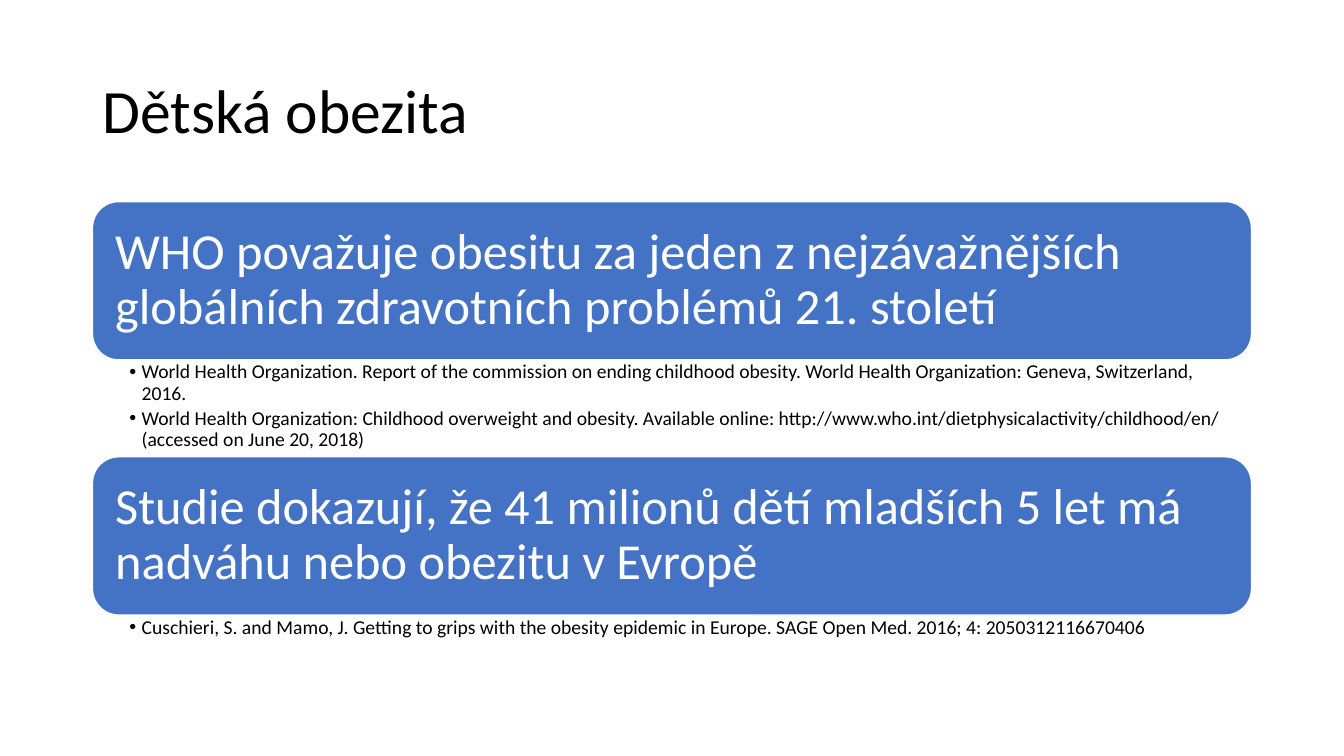
from pptx import Presentation
from pptx.dml.color import RGBColor
from pptx.enum.shapes import MSO_SHAPE
from pptx.enum.text import MSO_ANCHOR, MSO_AUTO_SIZE, PP_ALIGN
from pptx.util import Cm, Pt

ROUNDED = MSO_SHAPE.ROUNDED_RECTANGLE
MIDDLE, TOP = MSO_ANCHOR.MIDDLE, MSO_ANCHOR.TOP
LEFT = PP_ALIGN.LEFT
NO_AUTOFIT = MSO_AUTO_SIZE.NONE
TWO_CONTENT_LAYOUT = 3
FONT = "Calibri"
BLACK, WHITE, BLUE = "000000", "FFFFFF", "4472C4"

MARGIN, CONTENT_WIDTH = Cm(2.33), Cm(29.21)
STATEMENTS_TOP, BANNER_HEIGHT = Cm(5.08), Cm(3.99)
BULLET_INDENT = Cm(0.31)

STATEMENTS = [
    (
        "WHO považuje obesitu za jeden z nejzávažnějších globálních zdravotních problémů 21. století",
        [
            "World Health Organization. Report of the commission on ending childhood obesity. "
            "World Health Organization: Geneva, Switzerland, 2016.",
            "World Health Organization: Childhood overweight and obesity. Available online: "
            "http://www.who.int/dietphysicalactivity/childhood/en/ (accessed on June 20, 2018)",
        ],
        Cm(2.44),
    ),
    (
        "Studie dokazují, že 41 milionů dětí mladších 5 let má nadváhu nebo obezitu v Evropě",
        [
            "Cuschieri, S. and Mamo, J. Getting to grips with the obesity epidemic in Europe. "
            "SAGE Open Med. 2016; 4: 2050312116670406",
        ],
        Cm(1.65),
    ),
]


def color(value):
    return RGBColor.from_string(value)


def place(shape, left, top, width, height):
    shape.left, shape.top, shape.width, shape.height = left, top, width, height


def set_frame(frame, anchor, left, top, right, bottom):
    frame.word_wrap = True
    frame.auto_size = NO_AUTOFIT
    frame.vertical_anchor = anchor
    frame.margin_left, frame.margin_top = left, top
    frame.margin_right, frame.margin_bottom = right, bottom


def format_paragraph(para, size, ink, space_after=0):
    para.alignment = LEFT
    para.line_spacing = 0.9
    para.space_before = Pt(0)
    para.space_after = Pt(space_after)
    for span in para.runs:
        span.font.name = FONT
        span.font.size = Pt(size)
        span.font.color.rgb = color(ink)


def add_title(page, text, left, top, width, height):
    title = page.shapes.title
    place(title, left, top, width, height)
    frame = title.text_frame
    frame.text = text
    set_frame(frame, MIDDLE, Cm(0.25), Cm(0.13), Cm(0.25), Cm(0.13))
    format_paragraph(frame.paragraphs[0], 44, BLACK)


def add_banner(page, text, left, top, width, height):
    banner = page.shapes.add_shape(ROUNDED, left, top, width, height)
    banner.shadow.inherit = False
    banner.fill.solid()
    banner.fill.fore_color.rgb = color(BLUE)
    banner.line.color.rgb = color(WHITE)
    banner.line.width = Pt(1)
    frame = banner.text_frame
    frame.text = text
    set_frame(frame, MIDDLE, *[Cm(0.38)] * 4)
    format_paragraph(frame.paragraphs[0], 36, WHITE)


def fill_sources(body, sources, left, top, width, height):
    place(body, left, top, width, height)
    frame = body.text_frame
    frame.text = "\n".join(sources)
    set_frame(frame, TOP, Cm(0.93), Cm(0.05), Cm(0.28), Cm(0.05))
    for para in frame.paragraphs:
        properties = para._p.get_or_add_pPr()
        properties.set("marL", str(BULLET_INDENT))
        properties.set("indent", str(-BULLET_INDENT))
        format_paragraph(para, 14, BLACK, 2.8)


def add_statements(page, left, top, width):
    bodies = [page.placeholders[1], page.placeholders[2]]
    for body, (statement, sources, sources_height) in zip(bodies, STATEMENTS):
        add_banner(page, statement, left, top, width, BANNER_HEIGHT)
        top += BANNER_HEIGHT
        fill_sources(body, sources, left, top, width, sources_height)
        top += sources_height


def main():
    deck = Presentation()
    deck.slide_width, deck.slide_height = Cm(33.87), Cm(19.05)
    page = deck.slides.add_slide(deck.slide_layouts[TWO_CONTENT_LAYOUT])
    add_title(page, "Dětská obezita", MARGIN, Cm(1.01), CONTENT_WIDTH, Cm(3.68))
    add_statements(page, MARGIN, STATEMENTS_TOP, CONTENT_WIDTH)
    deck.save("out.pptx")


if __name__ == "__main__":
    main()
